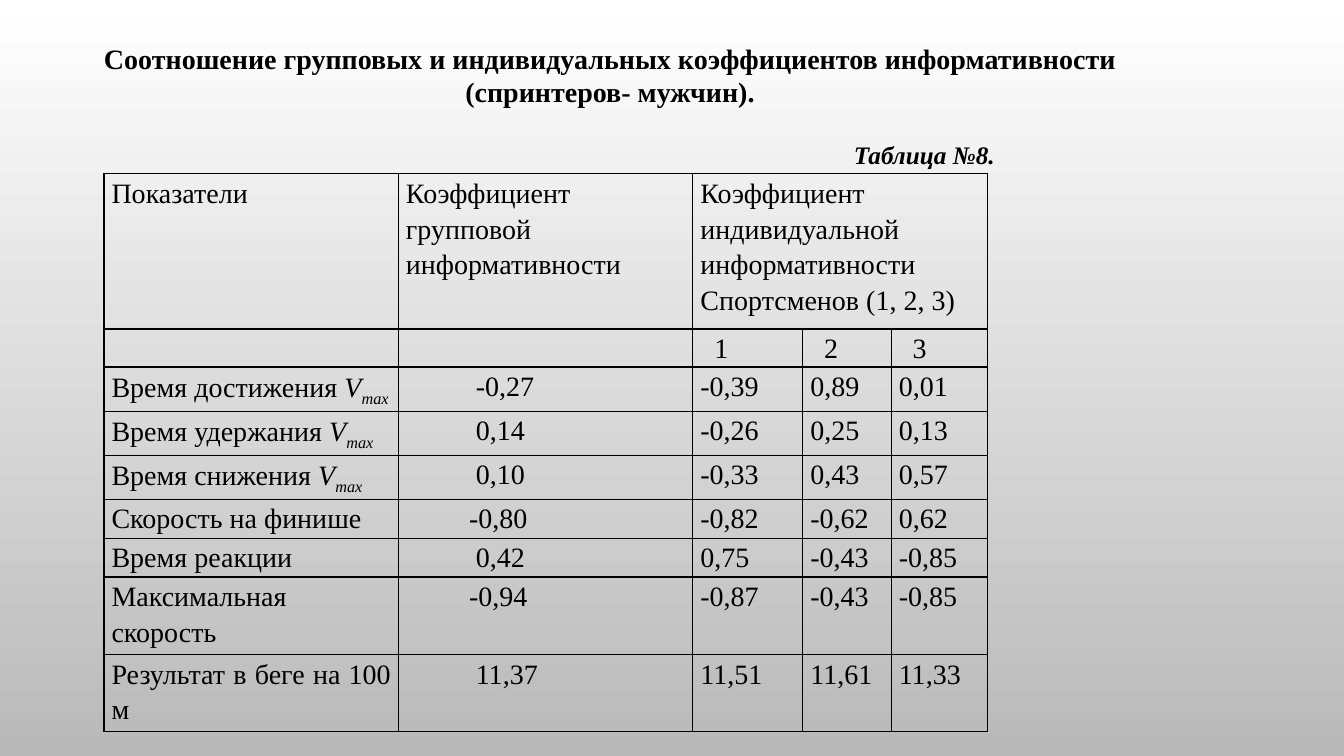
"""Build the slide comparing group and individual informativeness coefficients."""
from dataclasses import dataclass

from lxml.etree import SubElement
from pptx import Presentation
from pptx.dml.color import RGBColor
from pptx.enum.text import MSO_ANCHOR as Anchor, PP_ALIGN as Align
from pptx.oxml.ns import qn
from pptx.slide import Slide
from pptx.table import _Cell as Cell
from pptx.util import Cm, Pt

BLACK = RGBColor(0, 0, 0)
WHITE = RGBColor(255, 255, 255)
GRAY = RGBColor(0xB9, 0xB9, 0xB9)
FONT = "Times New Roman"
COLUMN_WIDTHS = (7.42, 7.42, 2.77, 2.23, 2.42)
HEADINGS = (
    "Показатели",
    "Коэффициент групповой информативности",
    "Коэффициент индивидуальной информативности\nСпортсменов (1, 2, 3)",
)
ATHLETES = ("1", "2", "3")
ATHLETE_INDENT = 0.35
HEADING_HEIGHT = 3.91
ATHLETE_HEIGHT = 0.96


@dataclass(frozen=True)
class Measure:
    label: str
    group: str
    athletes: tuple[str, str, str]
    height: float = 0.98
    indent: float = 1.76
    max_speed: bool = False


@dataclass(frozen=True)
class Caption:
    text: str
    left: float
    top: float
    width: float
    height: float
    size: int
    align: Align
    anchor: Anchor
    italic: bool = False
    right_margin: float = 0.25


MEASURES = (
    Measure("Время достижения ", "-0,27", ("-0,39", "0,89", "0,01"), 1.11, max_speed=True),
    Measure("Время удержания ", "0,14", ("-0,26", "0,25", "0,13"), 1.11, max_speed=True),
    Measure("Время снижения ", "0,10", ("-0,33", "0,43", "0,57"), 1.11, max_speed=True),
    Measure("Скорость на финише", "-0,80", ("-0,82", "-0,62", "0,62"), indent=1.59),
    Measure("Время реакции", "0,42", ("0,75", "-0,43", "-0,85")),
    Measure("Максимальная скорость", "-0,94", ("-0,87", "-0,43", "-0,85"), 1.95, 1.59),
    Measure("Результат в беге на 100 м", "11,37", ("11,51", "11,61", "11,33"), 1.95),
)
CAPTIONS = (
    Caption(
        "Соотношение групповых и индивидуальных коэффициентов информативности "
        "(спринтеров- мужчин).",
        2.18, 0.91, 26.39, 1.96, 20, Align.CENTER, Anchor.MIDDLE,
    ),
    Caption("Таблица №8.", 19.94, 3.38, 5.46, 1.02, 18, Align.RIGHT, Anchor.TOP, True, 0.33),
)


def apply(target: object, values: dict[str, object]) -> None:
    """Set every listed attribute on the target."""
    for name, value in values.items():
        setattr(target, name, value)


def add_span(para, text: str, size: int = 20, bold: bool = False, italic: bool = False):
    """Add a black run to a paragraph."""
    span = para.add_run()
    span.text = text
    apply(span.font, {"name": FONT, "size": Pt(size), "bold": bold, "italic": italic})
    span.font.color.rgb = BLACK
    return span


def add_caption(page: Slide, caption: Caption) -> None:
    """Place a bold caption."""
    place = (caption.left, caption.top, caption.width, caption.height)
    box = page.shapes.add_textbox(*map(Cm, place))
    apply(box.text_frame, {
        "word_wrap": True,
        "vertical_anchor": caption.anchor,
        "margin_right": Cm(caption.right_margin),
    })
    para = box.text_frame.paragraphs[0]
    para.alignment = caption.align
    add_span(para, caption.text, caption.size, True, caption.italic)


def style_cell(cell: Cell) -> None:
    """Give a cell thin black borders, narrow margins and no fill."""
    apply(cell, {
        "margin_left": Cm(0.19), "margin_right": Cm(0.19),
        "margin_top": 0, "margin_bottom": 0,
    })
    properties = cell._tc.get_or_add_tcPr()
    for side in ("lnL", "lnR", "lnT", "lnB"):
        line = SubElement(properties, qn(f"a:{side}"), w=str(Pt(1)))
        SubElement(SubElement(line, qn("a:solidFill")), qn("a:srgbClr"), val=str(BLACK))
    cell.fill.background()


def write_cell(cell: Cell, text: str, indent: float = 0, max_speed: bool = False) -> None:
    """Write justified paragraphs, with the maximum speed symbol when asked."""
    frame = cell.text_frame
    for index, line in enumerate(text.split("\n")):
        para = frame.add_paragraph() if index else frame.paragraphs[0]
        apply(para, {"alignment": Align.JUSTIFY, "line_spacing": 1.15})
        if indent:
            para._p.get_or_add_pPr().set("marL", str(Cm(indent)))
        add_span(para, line)
    if max_speed:
        add_span(para, "V", italic=True)
        subscript = add_span(para, "max", italic=True)
        subscript._r.get_or_add_rPr().set("baseline", "-25000")


def add_measures(page: Slide) -> None:
    """Build the coefficient table."""
    heights = (HEADING_HEIGHT, ATHLETE_HEIGHT, *(measure.height for measure in MEASURES))
    table = page.shapes.add_table(
        len(heights), len(COLUMN_WIDTHS), Cm(2.62), Cm(4.38),
        Cm(sum(COLUMN_WIDTHS)), Cm(sum(heights)),
    ).table
    apply(table, {"first_row": False, "horz_banding": False})
    for column, width in zip(table.columns, COLUMN_WIDTHS):
        column.width = Cm(width)
    for row, height in zip(table.rows, heights):
        row.height = Cm(height)
    for cell in table.iter_cells():
        style_cell(cell)
    table.cell(0, 2).merge(table.cell(0, 4))
    for column, heading in enumerate(HEADINGS):
        write_cell(table.cell(0, column), heading)
    for column, athlete in enumerate(ATHLETES, 2):
        write_cell(table.cell(1, column), athlete, ATHLETE_INDENT)
    for row, measure in enumerate(MEASURES, 2):
        write_cell(table.cell(row, 0), measure.label, max_speed=measure.max_speed)
        write_cell(table.cell(row, 1), measure.group, measure.indent)
        for column, value in enumerate(measure.athletes, 2):
            write_cell(table.cell(row, column), value)


def main() -> None:
    """Create and save the deck."""
    deck = Presentation()
    apply(deck, {"slide_width": Cm(33.87), "slide_height": Cm(19.05)})
    page = deck.slides.add_slide(deck.slide_layouts[6])
    fill = page.background.fill
    fill.gradient()
    fill.gradient_angle = 270
    for stop, color, position in zip(fill.gradient_stops, (WHITE, GRAY), (0, 1)):
        stop.color.rgb = color
        stop.position = position
    add_measures(page)
    for caption in CAPTIONS:
        add_caption(page, caption)
    deck.save("out.pptx")


if __name__ == "__main__":
    main()
